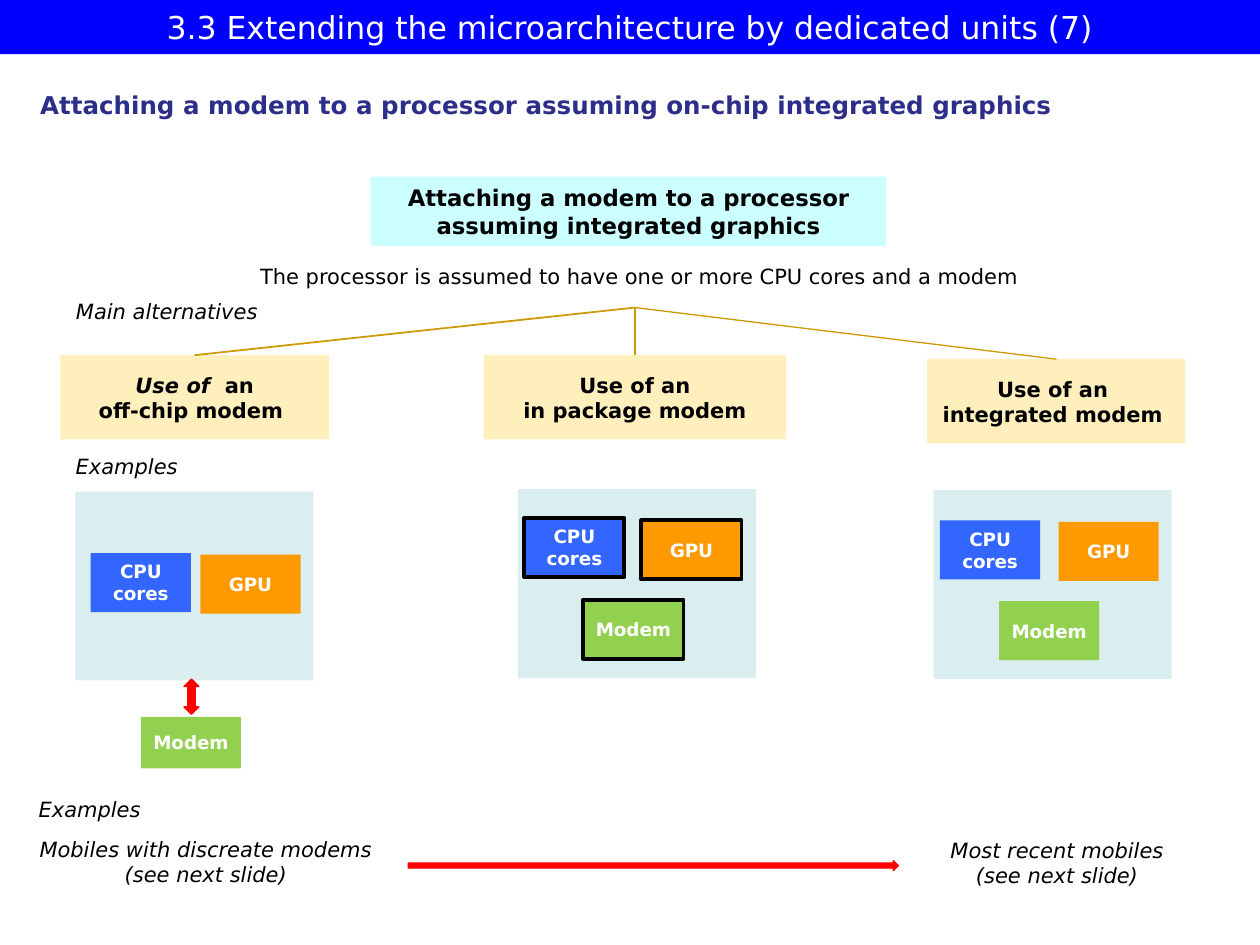
from lxml.etree import SubElement
from pptx import Presentation
from pptx.dml.color import RGBColor
from pptx.enum.shapes import MSO_CONNECTOR, MSO_SHAPE
from pptx.enum.text import MSO_ANCHOR, PP_ALIGN
from pptx.oxml.ns import qn
from pptx.util import Cm, Pt

FONT = "DejaVu Sans"
COLORS = {
    "title": "0000FF", "heading": "2D2D8A", "header": "CCFFFF",
    "alternative": "FFEFBD", "branch": "CC9900", "panel": "DAEDEF",
    "cpu": "3366FF", "gpu": "FF9900", "modem": "92D050",
    "arrow": "FF0000", "black": "000000", "white": "FFFFFF",
}
RGB = {name: RGBColor.from_string(value) for name, value in COLORS.items()}


def write(sp, lines, size, color="black", bold=False, italic=False,
          align=PP_ALIGN.CENTER, anchor=MSO_ANCHOR.MIDDLE):
    """Fill a shape with one paragraph per line, all in one format."""
    tf = sp.text_frame
    tf.word_wrap = False
    tf.vertical_anchor = anchor
    tf.text = "\n".join(lines)
    for p in tf.paragraphs:
        p.alignment = align
        p.font.name = FONT
        p.font.size = Pt(size)
        p.font.bold = bold
        p.font.italic = italic
        p.font.color.rgb = RGB[color]


def add_block(x, y, w, h, fill, line=None, line_width=0.75, kind=MSO_SHAPE.RECTANGLE):
    sp = s.shapes.add_shape(kind, Cm(x), Cm(y), Cm(w), Cm(h))
    sp.shadow.inherit = False
    sp.fill.solid()
    sp.fill.fore_color.rgb = RGB[fill]
    if line:
        sp.line.color.rgb = RGB[line]
        sp.line.width = Pt(line_width)
    else:
        sp.line.fill.background()
    return sp


prs = Presentation()
prs.slide_width, prs.slide_height = Cm(25.4), Cm(19.05)
s = prs.slides.add_slide(prs.slide_layouts[5])

title = s.shapes.title
title.left, title.top, title.width, title.height = 0, 0, prs.slide_width, Cm(1.09)
title.fill.solid()
title.fill.fore_color.rgb = RGB["title"]
write(title, ["3.3 Extending the microarchitecture by dedicated units (7)"], 18, "white")

# Free-standing texts: x, y, w, h, lines, format
italic = {"size": 12, "italic": True}
left_italic = {**italic, "align": PP_ALIGN.LEFT}
heading = {"size": 14, "color": "heading", "bold": True, "align": PP_ALIGN.LEFT}
texts = [
    (0.56, 1.7, 21.39, 0.86,
     ["Attaching a modem to a processor assuming on-chip integrated graphics"], heading),
    (4.75, 5.18, 16.28, 0.76,
     ["The processor is assumed to have one or more CPU cores and a modem"], {"size": 12}),
    (1.27, 5.89, 4.19, 0.76, ["Main alternatives"], italic),
    (1.27, 9.02, 2.57, 0.76, ["Examples"], italic),
    (0.53, 15.93, 2.57, 0.76, ["Examples"], left_italic),
    (0.53, 16.74, 7.24, 1.27, ["Mobiles with discreate modems", "(see next slide)"], italic),
    (18.82, 16.76, 4.98, 1.27, ["Most recent mobiles", "(see next slide)"], italic),
]
for x, y, w, h, lines, style in texts:
    sp = s.shapes.add_textbox(Cm(x), Cm(y), Cm(w), Cm(h))
    write(sp, lines, anchor=MSO_ANCHOR.TOP, **style)

header = add_block(7.47, 3.56, 10.39, 1.4, "header")
write(header, ["Attaching a modem to a processor", "assuming integrated graphics"], 13, bold=True)

# Three alternatives branching from one point
alternatives = [
    (1.22, 7.16, 5.41, ["", "off-chip modem "], 1),
    (9.75, 7.16, 6.1, ["Use of an", "in package modem"], 0.75),
    (18.69, 7.24, 5.21, ["Use of an ", "integrated modem "], 0.75),
]
for x, y, w, lines, line_width in alternatives:
    sp = add_block(x, y, w, 1.7, "alternative")
    write(sp, lines, 12, bold=True)
    if not lines[0]:
        p = sp.text_frame.paragraphs[0]
        for text, slanted in (("Use of ", True), (" an", False)):
            r = p.add_run()
            r.text = text
            r.font.italic = slanted
    branch = s.shapes.add_connector(MSO_CONNECTOR.STRAIGHT, Cm(12.8), Cm(6.2), Cm(x), Cm(y))
    branch.end_connect(sp, 0)
    branch.line.color.rgb = RGB["branch"]
    branch.line.width = Pt(line_width)
    SubElement(branch._element.spPr, qn("a:effectLst"))

# Chip panels: panel, CPU, GPU and modem positions, modem height, outline
chips = [
    ((1.52, 9.91), (1.83, 11.15), (4.04, 11.18), (2.84, 14.45), 1.04, None),
    ((10.44, 9.86), (10.57, 10.44), (12.93, 10.49), (11.76, 12.09), 1.19, "black"),
    ((18.82, 9.88), (18.95, 10.49), (21.34, 10.52), (20.14, 12.12), 1.19, None),
]
for panel, cpu, gpu, modem, modem_height, outline in chips:
    add_block(*panel, 4.8, 3.81, "panel")
    units = [
        (cpu, 1.19, "cpu", ["CPU", "cores"]),
        (gpu, 1.19, "gpu", ["GPU"]),
        (modem, modem_height, "modem", ["Modem"]),
    ]
    for place, height, fill, lines in units:
        unit = add_block(*place, 2.02, height, fill, outline, 2.25)
        write(unit, lines, 10.5, "white", bold=True)

add_block(3.71, 13.69, 0.3, 0.71, "arrow", "arrow", kind=MSO_SHAPE.UP_DOWN_ARROW)
add_block(8.23, 17.35, 9.88, 0.2, "arrow", "arrow", kind=MSO_SHAPE.RIGHT_ARROW)

prs.save("out.pptx")
